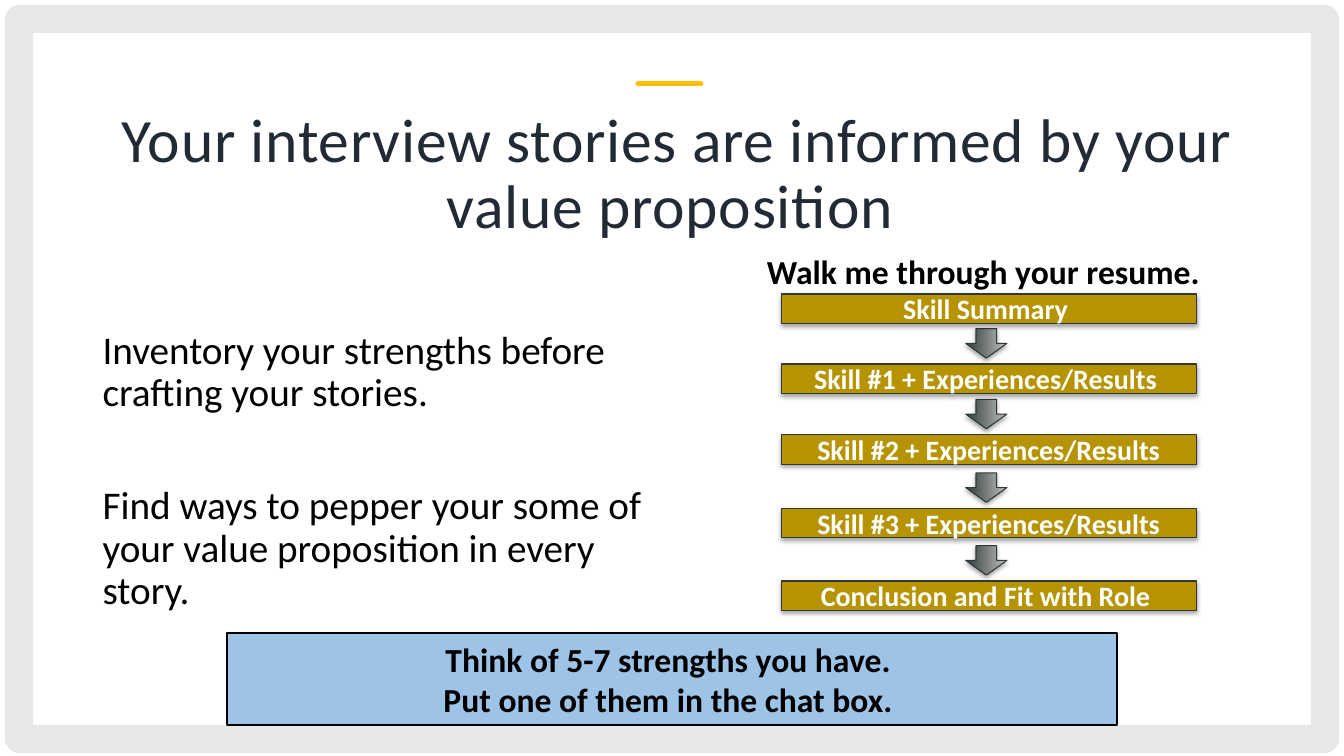
from lxml import etree
from pptx import Presentation
from pptx.dml.color import RGBColor
from pptx.enum import shapes, text
from pptx.oxml import ns
from pptx.util import Pt

BAR_LEFT, BAR_WIDTH, BAR_HEIGHT = 558, 296.6, 21
ARROW_LEFT, ARROW_LENGTH, ARROW_BREADTH = 694, 21, 29.5
STEPS = [
    ("Skill Summary ", 210),
    ("Skill #1 + Experiences/Results ", 260),
    ("Skill #2 + Experiences/Results", 310.5),
    ("Skill #3 + Experiences/Results", 363),
    ("Conclusion and Fit with Role ", 415),
]


def rgb(value):
    """Return the colour for a hex string."""
    return RGBColor.from_string(value)


def child(parent, tag, **attributes):
    """Append a DrawingML element and return it."""
    return etree.SubElement(parent, ns.qn(f"a:{tag}"), attributes)


def add_soft_shadow(shape):
    """Give a shape a faint shadow below it."""
    effects = shape._element.spPr.find(ns.qn("a:effectLst"))
    shadow = child(effects, "outerShdw", blurRad=str(Pt(3.1)), dist=str(Pt(1.8)),
                   dir="5400000", rotWithShape="0")
    child(child(shadow, "srgbClr", val="000000"), "alpha", val="35000")


def write(frame, lines, size, color="000000", bold=False, align=text.PP_ALIGN.LEFT,
          spacing=1.0, gap=0):
    """Fill a text frame with equally styled paragraphs."""
    frame.word_wrap = True
    for index, line in enumerate(lines):
        paragraph = frame.paragraphs[0] if index == 0 else frame.add_paragraph()
        paragraph.text = line
        paragraph.alignment = align
        paragraph.line_spacing = spacing
        paragraph.space_before = Pt(gap if index else 0)
        paragraph.font.name = "Calibri"
        paragraph.font.size = Pt(size)
        paragraph.font.bold = bold
        paragraph.font.color.rgb = rgb(color)


def add_text(slide, box, lines, size, **style):
    """Add a wrapped text box and return its frame."""
    frame = slide.shapes.add_textbox(*map(Pt, box)).text_frame
    write(frame, lines, size, **style)
    return frame


def add_block(slide, kind, box, fill, line, width):
    """Add an outlined preset shape, filled if a colour is given."""
    block = slide.shapes.add_shape(kind, *map(Pt, box))
    block.shadow.inherit = False
    if fill:
        block.fill.solid()
        block.fill.fore_color.rgb = rgb(fill)
    else:
        block.fill.background()
    block.line.color.rgb = rgb(line)
    block.line.width = Pt(width)
    return block


def add_accent(slide, left, right, y):
    """Add the short rounded rule above the title."""
    accent = slide.shapes.add_connector(shapes.MSO_CONNECTOR.STRAIGHT,
                                        Pt(left), Pt(y), Pt(right), Pt(y))
    accent.line.color.rgb = rgb("FFC000")
    accent.line.width = Pt(4)
    accent.line._get_or_add_ln().set("cap", "rnd")
    child(accent._element.spPr, "effectLst")


def add_step(slide, label, top):
    """Add one bar of the resume walk-through."""
    bar = add_block(slide, shapes.MSO_SHAPE.RECTANGLE,
                    (BAR_LEFT, top, BAR_WIDTH, BAR_HEIGHT), "B59302", "303838", 0.75)
    add_soft_shadow(bar)
    bar.text_frame.vertical_anchor = text.MSO_ANCHOR.MIDDLE
    write(bar.text_frame, [label], 20, color="FFFFFF", bold=True,
          align=text.PP_ALIGN.CENTER)


def add_arrow(slide, next_top):
    """Add the downward arrow that leads to the next bar."""
    arrow = add_block(slide, shapes.MSO_SHAPE.RIGHT_ARROW,
                      (ARROW_LEFT, next_top - ARROW_BREADTH, ARROW_LENGTH, ARROW_BREADTH),
                      None, "303838", 0.75)
    arrow.rotation = 90
    arrow.fill.gradient()
    arrow.fill.gradient_angle = 90
    for stop, position, color in zip(arrow.fill.gradient_stops, (0, 1), ("303A3A", "BEC0C0")):
        stop.position = position
        stop.color.rgb = rgb(color)
    add_soft_shadow(arrow)


def main():
    """Build the slide and save it."""
    deck = Presentation()
    deck.slide_width, deck.slide_height = Pt(960), Pt(540)
    slide = deck.slides.add_slide(deck.slide_layouts[6])
    center = text.PP_ALIGN.CENTER

    add_block(slide, shapes.MSO_SHAPE.RECTANGLE, (13.7, 13.7, 933, 514), None, "E7E7E7", 20)
    add_accent(slide, 455.8, 500.4, 59.8)

    title = add_text(slide, (67.7, 70.6, 825.8, 108.7),
                     ["Your interview stories are informed by your value proposition "],
                     44, color="222A35", align=center, spacing=0.9)
    title.margin_left, title.margin_top = Pt(14.4), Pt(7.2)
    title.margin_right, title.margin_bottom = Pt(7.2), Pt(5.8)
    title.paragraphs[0].runs[0].font._element.set("spc", "50")

    add_text(slide, (66.2, 232.6, 408.2, 205.2),
             ["Inventory your strengths before crafting your stories.",
              "Find ways to pepper your some of your value proposition in every story."],
             28, spacing=0.9, gap=50.5)

    for _, top in STEPS[1:]:
        add_arrow(slide, top)
    for label, top in STEPS:
        add_step(slide, label, top)
    add_text(slide, (540.7, 175.7, 326.9, 36), ["Walk me through your resume."], 24, bold=True)

    banner = add_block(slide, shapes.MSO_SHAPE.RECTANGLE, (162, 452.2, 635.8, 65.5),
                       "9DC3E6", "000000", 1.5)
    write(banner.text_frame,
          ["Think of 5-7 strengths you have. ", "Put one of them in the chat box. "],
          24, bold=True, align=center)

    deck.save("out.pptx")


if __name__ == "__main__":
    main()
